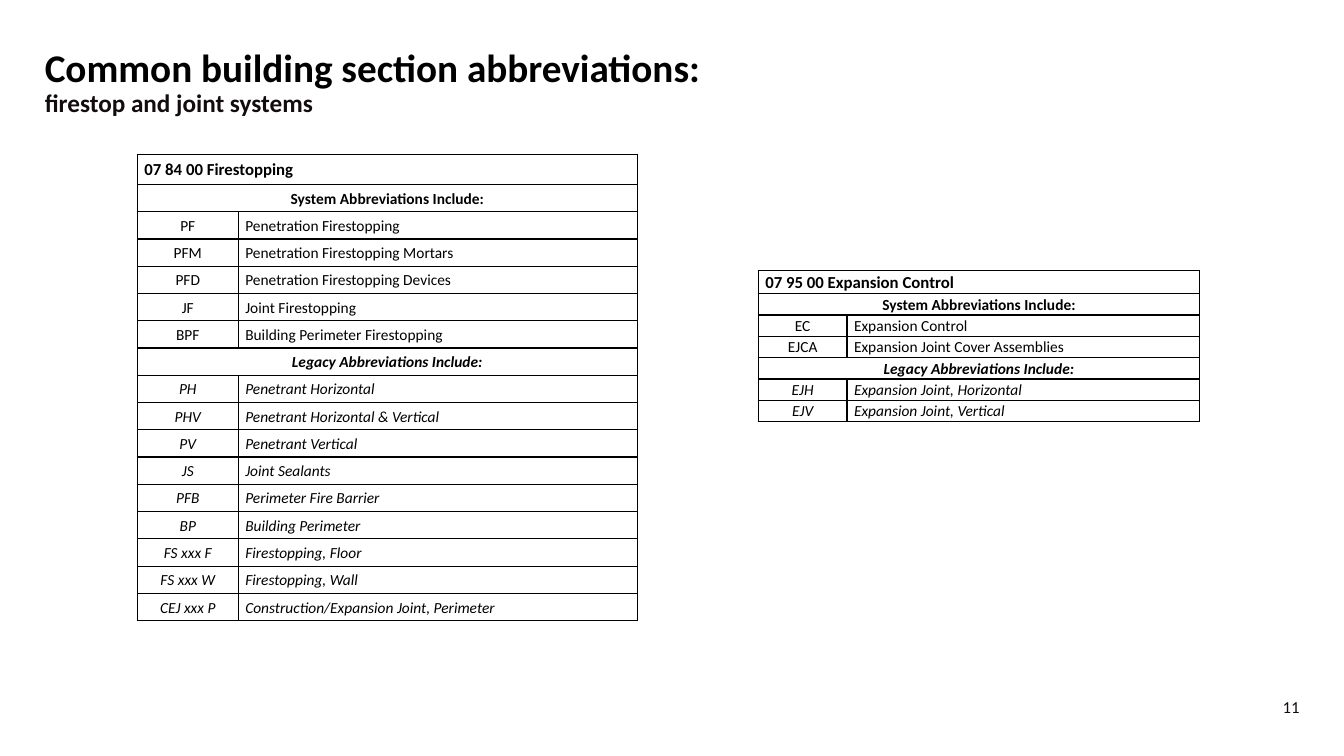
from dataclasses import dataclass

from lxml.etree import SubElement
from pptx import Presentation
from pptx.dml.color import RGBColor
from pptx.enum.text import MSO_ANCHOR, PP_ALIGN
from pptx.oxml.ns import qn
from pptx.slide import Slide
from pptx.table import _Cell as Cell
from pptx.text.text import TextFrame, _Paragraph as Para
from pptx.util import Inches, Length, Pt

COLS, ROWS = 160, 90
UNIT = Inches(7.5) / ROWS
FONT = "Calibri"
INK = {"black": "000000", "dark": "130C0E"}


@dataclass
class Group:
    label: str
    slant: bool
    items: list[tuple[str, str]]


@dataclass
class Chart:
    title: str
    left: float
    top: float
    widths: tuple[float, float]
    head: float
    row: float
    groups: list[Group]


CHARTS = [
    Chart("07 84 00 Firestopping", 16.36, 18.36, (12, 47.52), 3.6, 3.25, [
        Group("System Abbreviations Include:", False, [
            ("PF", "Penetration Firestopping"),
            ("PFM", "Penetration Firestopping Mortars"),
            ("PFD", "Penetration Firestopping Devices"),
            ("JF", "Joint Firestopping"),
            ("BPF", "Building Perimeter Firestopping"),
        ]),
        Group("Legacy Abbreviations Include:", True, [
            ("PH", "Penetrant Horizontal"),
            ("PHV", "Penetrant Horizontal & Vertical"),
            ("PV", "Penetrant Vertical"),
            ("JS", "Joint Sealants"),
            ("PFB", "Perimeter Fire Barrier"),
            ("BP", "Building Perimeter"),
            ("FS xxx F", "Firestopping, Floor"),
            ("FS xxx W", "Firestopping, Wall"),
            ("CEJ xxx P", "Construction/Expansion Joint, Perimeter"),
        ]),
    ]),
    Chart("07 95 00 Expansion Control", 90.28, 32.2, (10.56, 42), 2.76, 2.54, [
        Group("System Abbreviations Include:", False, [
            ("EC", "Expansion Control"),
            ("EJCA", "Expansion Joint Cover Assemblies"),
        ]),
        Group("Legacy Abbreviations Include:", True, [
            ("EJH", "Expansion Joint, Horizontal"),
            ("EJV", "Expansion Joint, Vertical"),
        ]),
    ]),
]


def grid(count: float) -> Length:
    return Length(round(count * UNIT))


def write(para: Para, text: str, size: float, ink: str = "black",
          bold: bool = False, slant: bool = False) -> None:
    run = para.add_run()
    run.text = text
    font = run.font
    font.name, font.size = FONT, Pt(size)
    font.bold, font.italic = bold, slant
    font.color.rgb = RGBColor.from_string(INK[ink])


def pad(frame: TextFrame, anchor: MSO_ANCHOR) -> None:
    frame.margin_left = frame.margin_right = 0
    frame.margin_top = frame.margin_bottom = 0
    frame.vertical_anchor = anchor
    frame.word_wrap = True


def border(cell: Cell) -> None:
    props = cell._tc.get_or_add_tcPr()
    for side in ("lnL", "lnR", "lnT", "lnB"):
        line = SubElement(props, qn(f"a:{side}"), w=str(Pt(1)))
        fill = SubElement(line, qn("a:solidFill"))
        SubElement(fill, qn("a:srgbClr"), val=INK["black"])


def fill_cell(cell: Cell, text: str, size: float, align: PP_ALIGN,
              bold: bool, slant: bool) -> None:
    para = cell.text_frame.paragraphs[0]
    para.alignment = align
    para.line_spacing = 1.07
    write(para, text, size, bold=bold, slant=slant)


def draw_title(slide: Slide) -> None:
    title = slide.shapes.title
    title.left, title.top = grid(5.33), grid(5.76)
    title.width, title.height = grid(141), grid(9.6)
    pad(title.text_frame, MSO_ANCHOR.TOP)
    para = title.text_frame.paragraphs[0]
    para.alignment = PP_ALIGN.LEFT
    para.line_spacing = 0.9
    write(para, "Common building section abbreviations:", 28, bold=True)
    para.add_line_break()
    write(para, "firestop and joint systems", 18, "dark", bold=True)


def draw_page(slide: Slide) -> None:
    box = slide.shapes.add_textbox(grid(144.72), grid(83.28), grid(10), grid(1.8))
    pad(box.text_frame, MSO_ANCHOR.MIDDLE)
    para = box.text_frame.paragraphs[0]
    para.alignment = PP_ALIGN.RIGHT
    write(para, "11", 12, "dark")


def draw_chart(slide: Slide, chart: Chart) -> None:
    count = 1 + sum(1 + len(group.items) for group in chart.groups)
    height = chart.head + chart.row * (count - 1)
    table = slide.shapes.add_table(
        count, 2, grid(chart.left), grid(chart.top),
        grid(sum(chart.widths)), grid(height)).table
    table.first_row = table.horz_banding = False
    for col, width in zip(table.columns, chart.widths):
        col.width = grid(width)
    for spot, row in enumerate(table.rows):
        row.height = grid(chart.row if spot else chart.head)
    for cell in table.iter_cells():
        border(cell)
        cell.fill.background()
        cell.margin_left = cell.margin_right = Inches(0.07)
        cell.margin_top = cell.margin_bottom = 0
        cell.vertical_anchor = MSO_ANCHOR.MIDDLE

    def span(spot: int, text: str, size: float, align: PP_ALIGN,
             slant: bool = False) -> None:
        cell = table.cell(spot, 0)
        cell.merge(table.cell(spot, 1))
        fill_cell(cell, text, size, align, True, slant)

    span(0, chart.title, 12, PP_ALIGN.LEFT)
    spot = 1
    for group in chart.groups:
        span(spot, group.label, 11, PP_ALIGN.CENTER, group.slant)
        for spot, (code, name) in enumerate(group.items, spot + 1):
            fill_cell(table.cell(spot, 0), code, 11, PP_ALIGN.CENTER, False, group.slant)
            fill_cell(table.cell(spot, 1), name, 11, PP_ALIGN.LEFT, False, group.slant)
        spot += 1


def main() -> None:
    deck = Presentation()
    deck.slide_width, deck.slide_height = grid(COLS), grid(ROWS)
    slide = deck.slides.add_slide(deck.slide_layouts[5])
    draw_title(slide)
    draw_page(slide)
    for chart in CHARTS:
        draw_chart(slide, chart)
    deck.save("out.pptx")


if __name__ == "__main__":
    main()
